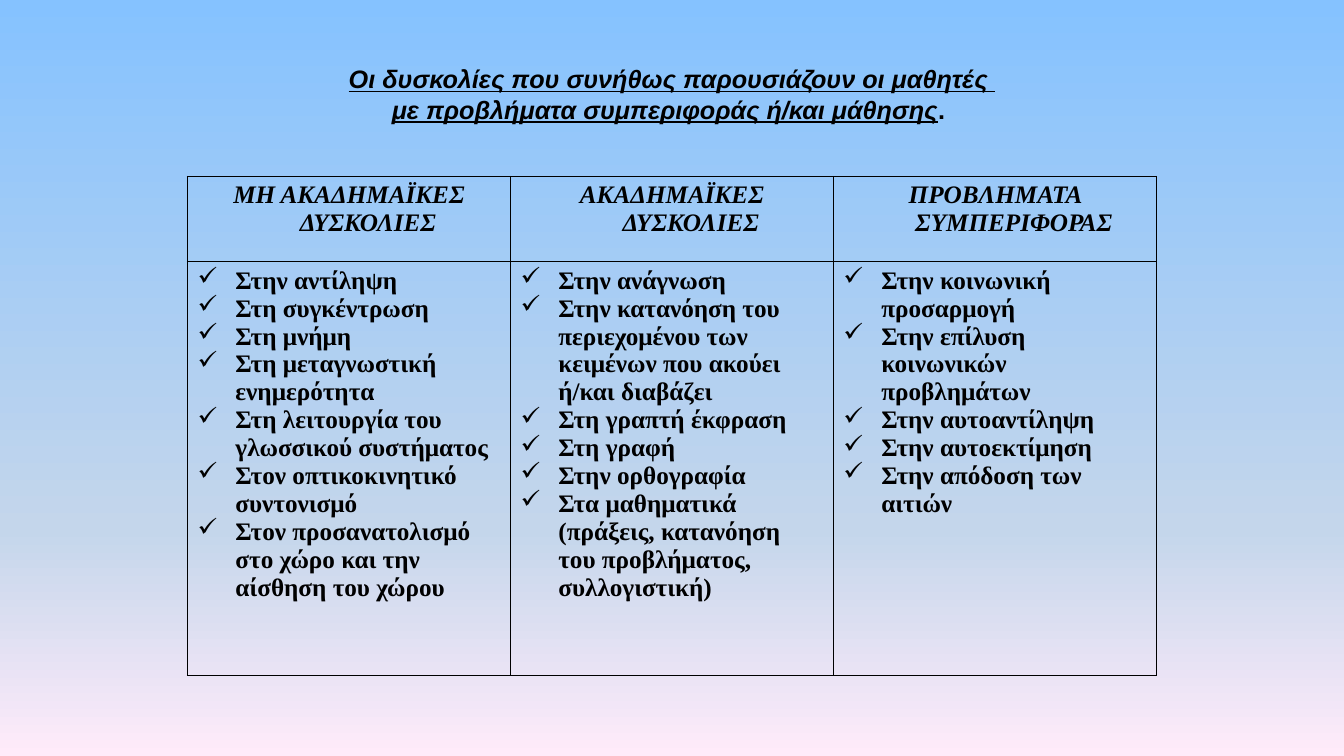
from copy import deepcopy

from lxml import etree
from pptx import Presentation
from pptx.dml.color import RGBColor
from pptx.enum.text import MSO_ANCHOR, PP_ALIGN
from pptx.oxml.ns import qn
from pptx.util import Pt

CENTER = PP_ALIGN.CENTER
LEFT = PP_ALIGN.LEFT
MIDDLE = MSO_ANCHOR.MIDDLE

BLACK = RGBColor(0x00, 0x00, 0x00)
SKY = RGBColor(0x85, 0xC2, 0xFF)
HAZE = RGBColor(0xC4, 0xD6, 0xEB)
BLUSH = RGBColor(0xFF, 0xEB, 0xFA)

BACKDROP = [(0, SKY), (0.7, HAZE), (1, BLUSH)]
TITLE_FONT = {"name": "Arial", "size": Pt(18), "bold": True}
HEADING_FONT = {"name": "Times New Roman", "size": Pt(18), "bold": True, "italic": True}
ITEM_FONT = {**HEADING_FONT, "italic": False}
INDENT = Pt(27)

TITLE = ("Οι δυσκολίες που συνήθως παρουσιάζουν οι μαθητές \v"
         "με προβλήματα συμπεριφοράς ή/και μάθησης")

DIFFICULTIES = {
    "ΜΗ ΑΚΑΔΗΜΑΪΚΕΣ ΔΥΣΚΟΛΙΕΣ": [
        "Στην αντίληψη",
        "Στη συγκέντρωση",
        "Στη μνήμη",
        "Στη μεταγνωστική ενημερότητα",
        "Στη λειτουργία του γλωσσικού συστήματος",
        "Στον οπτικοκινητικό συντονισμό",
        "Στον προσανατολισμό στο χώρο και την αίσθηση του χώρου",
    ],
    "ΑΚΑΔΗΜΑΪΚΕΣ ΔΥΣΚΟΛΙΕΣ": [
        "Στην ανάγνωση",
        "Στην κατανόηση του περιεχομένου των κειμένων που ακούει ή/και διαβάζει",
        "Στη γραπτή έκφραση",
        "Στη γραφή",
        "Στην ορθογραφία",
        "Στα μαθηματικά (πράξεις, κατανόηση του προβλήματος, συλλογιστική)",
    ],
    "ΠΡΟΒΛΗΜΑΤΑ ΣΥΜΠΕΡΙΦΟΡΑΣ": [
        "Στην κοινωνική προσαρμογή",
        "Στην επίλυση κοινωνικών προβλημάτων",
        "Στην αυτοαντίληψη",
        "Στην αυτοεκτίμηση",
        "Στην απόδοση των αιτιών",
    ],
}


def apply_font(font, formats):
    for attribute, value in formats.items():
        setattr(font, attribute, value)
    font.color.rgb = BLACK


def paint_background(slide):
    fill = slide.background.fill
    fill.gradient()
    fill.gradient_angle = 270
    first_stop = fill.gradient_stops[0]._gs
    first_stop.addnext(deepcopy(first_stop))
    for stop, (position, color) in zip(fill.gradient_stops, BACKDROP):
        stop.position = position
        stop.color.rgb = color


def add_title(slide, left, top, width, height):
    frame = slide.shapes.add_textbox(left, top, width, height).text_frame
    frame.word_wrap = True
    frame.vertical_anchor = MIDDLE
    heading = frame.paragraphs[0]
    heading.alignment = CENTER
    heading.text = TITLE
    for run in heading.runs:
        apply_font(run.font, {**TITLE_FONT, "italic": True, "underline": True})
    full_stop = heading.add_run()
    full_stop.text = ". "
    apply_font(full_stop.font, TITLE_FONT)


def outline_cell(cell):
    properties = cell._tc.get_or_add_tcPr()
    for position, side in enumerate(("lnL", "lnR", "lnT", "lnB")):
        line = etree.Element(qn("a:" + side), w=str(Pt(1)))
        fill = etree.SubElement(line, qn("a:solidFill"))
        etree.SubElement(fill, qn("a:srgbClr"), val=str(BLACK))
        properties.insert(position, line)


def fill_cell(cell, lines, formats, alignment, bullet=None):
    cell.fill.background()
    outline_cell(cell)
    frame = cell.text_frame
    for number, line in enumerate(lines):
        paragraph = frame.add_paragraph() if number else frame.paragraphs[0]
        paragraph.alignment = alignment
        properties = paragraph._p.get_or_add_pPr()
        properties.set("marL", str(INDENT))
        properties.set("indent", str(-INDENT))
        if bullet:
            etree.SubElement(properties, qn("a:buChar"), char=bullet)
            tabs = etree.SubElement(properties, qn("a:tabLst"))
            etree.SubElement(tabs, qn("a:tab"), pos=str(Pt(36)), algn="l")
        run = paragraph.add_run()
        run.text = line
        apply_font(run.font, formats)


def add_difficulties(slide, left, top, width, height):
    count = len(DIFFICULTIES)
    table = slide.shapes.add_table(2, count, left, top, width, height).table
    table.first_row = False
    table.horz_banding = False
    heading_height = Pt(61)
    table.rows[0].height = heading_height
    table.rows[1].height = height - heading_height
    for index, (heading, items) in enumerate(DIFFICULTIES.items()):
        table.columns[index].width = width // count
        fill_cell(table.cell(0, index), [heading], HEADING_FONT, CENTER)
        fill_cell(table.cell(1, index), items, ITEM_FONT, LEFT, "✓")


def main():
    deck = Presentation()
    deck.slide_width = Pt(960)
    deck.slide_height = Pt(540)
    slide = deck.slides.add_slide(deck.slide_layouts[6])
    paint_background(slide)
    add_title(slide, Pt(120), Pt(22), Pt(720), Pt(90))
    add_difficulties(slide, Pt(134), Pt(126), Pt(692), Pt(356.5))
    deck.save("out.pptx")


if __name__ == "__main__":
    main()
